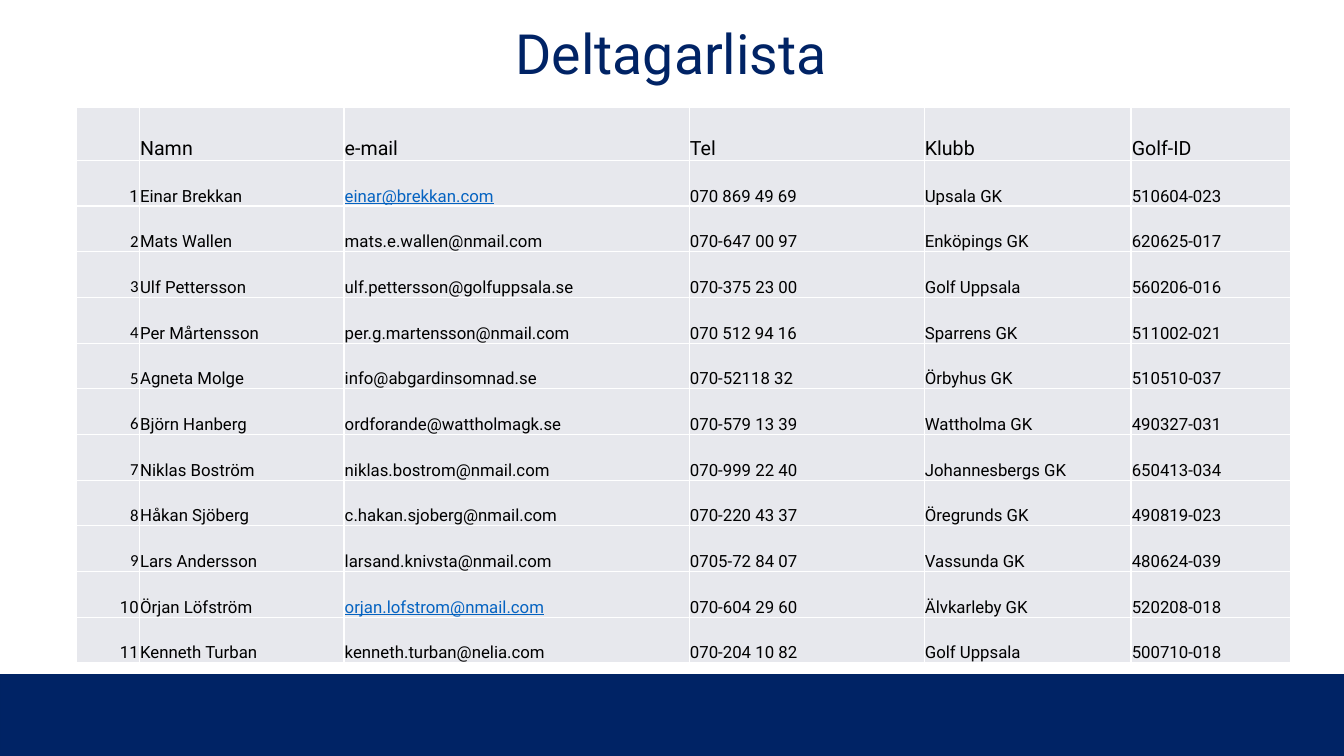
from lxml import etree
from pptx import Presentation
from pptx import util as u
from pptx.dml.color import RGBColor
from pptx.enum import shapes, text
from pptx.oxml import ns

Pt = u.Pt
THEME = dict(navy="002365", edge="002364", cell="E7E8ED", rule="FFFFFF",
             ink="000000", link="0563C1", font="Roboto", number_font="Calibri",
             title=39.6, head=14, body=12)
COLS = [44.7, 146.2, 246.6, 167.8, 147.8, 113.8]
HEAD_H, ROW_H = 37.6, 32.64
HEADINGS = ["", "Namn", "e-mail", "Tel", "Klubb", "Golf-ID"]
PLAYERS = [
    ("Einar Brekkan", "einar@brekkan.com", "070 869 49 69", "Upsala GK", "510604-023"),
    ("Mats Wallen", "mats.e.wallen@nmail.com", "070-647 00 97", "Enköpings GK", "620625-017"),
    ("Ulf Pettersson", "ulf.pettersson@golfuppsala.se", "070-375 23 00", "Golf Uppsala", "560206-016"),
    ("Per Mårtensson", "per.g.martensson@nmail.com", "070 512 94 16", "Sparrens GK", "511002-021"),
    ("Agneta Molge", "info@abgardinsomnad.se", "070-52118 32", "Örbyhus GK", "510510-037"),
    ("Björn Hanberg", "ordforande@wattholmagk.se", "070-579 13 39", "Wattholma GK", "490327-031"),
    ("Niklas Boström", "niklas.bostrom@nmail.com", "070-999 22 40", "Johannesbergs GK", "650413-034"),
    ("Håkan Sjöberg", "c.hakan.sjoberg@nmail.com", "070-220 43 37", "Öregrunds GK", "490819-023"),
    ("Lars Andersson", "larsand.knivsta@nmail.com", "0705-72 84 07", "Vassunda GK", "480624-039"),
    ("Örjan Löfström", "orjan.lofstrom@nmail.com", "070-604 29 60", "Älvkarleby GK", "520208-018"),
    ("Kenneth Turban", "kenneth.turban@nelia.com", "070-204 10 82", "Golf Uppsala", "500710-018"),
]
LINKED_ROWS = (1, 10)
CALIBRI_ROWS = range(2, 10)


def write(p, words, color, **fmt):
    """Put one run in a paragraph, or size the paragraph if it is empty."""
    font = p.font
    if words:
        r = p.add_run()
        r.text = words
        font = r.font
    for key, value in fmt.items():
        setattr(font, key, value)
    font.color.rgb = RGBColor.from_string(color)


def add_borders(cell):
    tcPr = cell._tc.get_or_add_tcPr()
    for i, side in enumerate(("lnL", "lnR", "lnT", "lnB")):
        ln = etree.Element(ns.qn(f"a:{side}"), w=str(Pt(1)))
        fill = etree.SubElement(ln, ns.qn("a:solidFill"))
        etree.SubElement(fill, ns.qn("a:srgbClr"), val=THEME["rule"])
        tcPr.insert(i, ln)


prs = Presentation()
prs.slide_width, prs.slide_height = Pt(960), Pt(540)
s = prs.slides.add_slide(prs.slide_layouts[6])

# Footer band
sp = s.shapes.add_shape(shapes.MSO_SHAPE.RECTANGLE, Pt(0), Pt(482.4), Pt(960), Pt(57.6))
sp.shadow.inherit = False
sp.fill.solid()
sp.fill.fore_color.rgb = RGBColor.from_string(THEME["navy"])
sp.line.color.rgb = RGBColor.from_string(THEME["edge"])
sp.line.width = Pt(2)

# Title
sp = s.shapes.add_textbox(Pt(65.5), Pt(13.7), Pt(828), Pt(54))
tf = sp.text_frame
tf.word_wrap = True
tf.vertical_anchor = text.MSO_ANCHOR.MIDDLE
p = tf.paragraphs[0]
p.alignment = text.PP_ALIGN.CENTER
p.line_spacing = 0.9
write(p, "Deltagarlista", THEME["navy"], name=THEME["font"], size=Pt(THEME["title"]))

# Table of players
rows = [HEADINGS] + [(str(n), *player) for n, player in enumerate(PLAYERS, 1)]
heights = [HEAD_H] + [ROW_H] * len(PLAYERS)
table = s.shapes.add_table(len(rows), len(COLS), Pt(54.9), Pt(77),
                           Pt(sum(COLS)), Pt(sum(heights))).table
table.first_row = table.horz_banding = False
for column, width in zip(table.columns, COLS):
    column.width = Pt(width)

cell_format = dict(margin_left=Pt(0.5), margin_right=Pt(0.5), margin_top=Pt(0.5),
                   margin_bottom=Pt(0), vertical_anchor=text.MSO_ANCHOR.BOTTOM)
for i, row in enumerate(rows):
    table.rows[i].height = Pt(heights[i])
    for j, words in enumerate(row):
        cell = table.cell(i, j)
        for key, value in cell_format.items():
            setattr(cell, key, value)
        cell.fill.solid()
        cell.fill.fore_color.rgb = RGBColor.from_string(THEME["cell"])
        add_borders(cell)

        p = cell.text_frame.paragraphs[0]
        p.alignment = text.PP_ALIGN.RIGHT if j == 0 else text.PP_ALIGN.LEFT
        linked = j == 2 and i in LINKED_ROWS
        calibri = j == 0 and i in CALIBRI_ROWS
        write(p, words, THEME["link" if linked else "ink"],
              name=THEME["number_font" if calibri else "font"],
              size=Pt(THEME["body" if i else "head"]), underline=linked)

prs.save("out.pptx")
